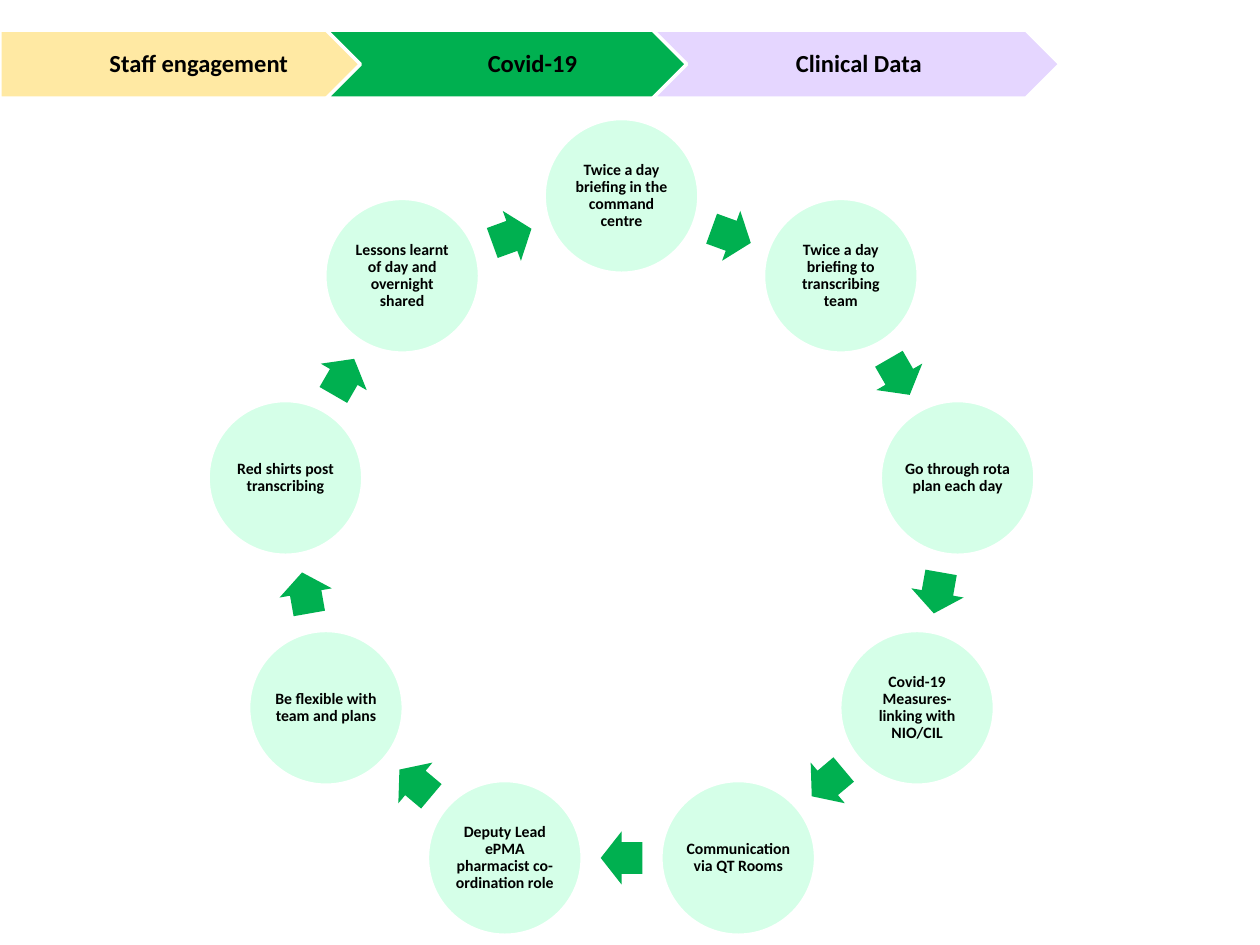
"""Builds a slide with a three-step banner above a nine-step briefing cycle."""
import math
from dataclasses import dataclass

import pptx
import pptx.dml.color
import pptx.enum.shapes
import pptx.enum.text
import pptx.util

Cm = pptx.util.Cm
Pt = pptx.util.Pt
SHAPES = pptx.enum.shapes.MSO_SHAPE

GREEN, MINT, WHITE, BLACK = "00B050", "D5FFE8", "FFFFFF", "000000"
CENTRE_X, CENTRE_Y, RADIUS = 12.53, 10.83, 6.88
CIRCLE_SIZE = 3.12
ARROW_WIDTH, ARROW_HEIGHT = 0.84, 1.07
BANNER_TOP, BANNER_WIDTH, BANNER_HEIGHT, BANNER_STEP = 0.61, 8.21, 1.37, 6.58


@dataclass
class Step:
    text: str
    fill: str
    preset: int
    left_margin: float


BANNER = [
    Step("Staff engagement", "FFE9A3", SHAPES.PENTAGON, 0.2),
    Step("Covid-19", GREEN, SHAPES.CHEVRON, 0.15),
    Step("Clinical Data", "E5D6FF", SHAPES.CHEVRON, 0.15),
]
CYCLE = [
    "Twice a day briefing in the command centre",
    "Twice a day briefing to transcribing team",
    "Go through rota plan each day",
    "Covid-19 Measures- linking with NIO/CIL",
    "Communication via QT Rooms",
    "Deputy Lead ePMA pharmacist co-ordination role",
    "Be flexible with team and plans",
    "Red shirts post transcribing",
    "Lessons learnt of day and overnight shared",
]


def set_colour(colour_format, value: str) -> None:
    colour_format.rgb = pptx.dml.color.RGBColor.from_string(value)


def set_attributes(target, values: dict) -> None:
    for name, value in values.items():
        setattr(target, name, value)


def add_filled(slide, preset, left: float, top: float, width: float, height: float,
               fill: str, outlined: bool = True):
    shape = slide.shapes.add_shape(preset, Cm(left), Cm(top), Cm(width), Cm(height))
    shape.shadow.inherit = False
    shape.fill.solid()
    set_colour(shape.fill.fore_color, fill)
    if outlined:
        set_colour(shape.line.color, WHITE)
        shape.line.width = Pt(2)
    else:
        shape.line.fill.background()
    return shape


def write_text(shape, text: str, size: float, margins: tuple) -> None:
    frame = shape.text_frame
    left, top, right, bottom = (Cm(margin) for margin in margins)
    set_attributes(frame, {
        "word_wrap": True,
        "vertical_anchor": pptx.enum.text.MSO_ANCHOR.MIDDLE,
        "margin_left": left,
        "margin_top": top,
        "margin_right": right,
        "margin_bottom": bottom,
    })
    paragraph = frame.paragraphs[0]
    set_attributes(paragraph, {"alignment": pptx.enum.text.PP_ALIGN.CENTER, "line_spacing": 0.9})
    run = paragraph.add_run()
    run.text = text
    set_attributes(run.font, {"name": "Calibri", "size": Pt(size), "bold": True})
    set_colour(run.font.color, BLACK)


def add_on_ring(slide, preset, angle: float, radius: float, width: float, height: float,
                fill: str, outlined: bool):
    left = CENTRE_X + radius * math.sin(math.radians(angle)) - width / 2
    top = CENTRE_Y - radius * math.cos(math.radians(angle)) - height / 2
    return add_filled(slide, preset, left, top, width, height, fill, outlined)


def draw_cycle(slide, labels: list) -> None:
    turn = 360 / len(labels)
    arrow_radius = RADIUS * math.cos(math.radians(turn / 2))
    for index, label in enumerate(labels):
        angle = index * turn
        circle = add_on_ring(slide, SHAPES.OVAL, angle, RADIUS,
                             CIRCLE_SIZE, CIRCLE_SIZE, MINT, True)
        write_text(circle, label, 9, (0.03,) * 4)
        arrow_angle = angle + turn / 2
        arrow = add_on_ring(slide, SHAPES.RIGHT_ARROW, arrow_angle, arrow_radius,
                            ARROW_WIDTH, ARROW_HEIGHT, GREEN, False)
        arrow.adjustments[0] = 0.6
        arrow.adjustments[1] = 0.5
        arrow.rotation = arrow_angle


def draw_banner(slide, steps: list) -> None:
    for index, step in enumerate(steps):
        shape = add_filled(slide, step.preset, index * BANNER_STEP, BANNER_TOP,
                           BANNER_WIDTH, BANNER_HEIGHT, step.fill)
        write_text(shape, step.text, 14, (step.left_margin, 0.1, 0.05, 0.1))


def main() -> None:
    presentation = pptx.Presentation()
    set_attributes(presentation, {"slide_width": Cm(25.4), "slide_height": Cm(19.05)})
    slide = presentation.slides.add_slide(presentation.slide_layouts[6])
    draw_cycle(slide, CYCLE)
    draw_banner(slide, BANNER)
    presentation.save("out.pptx")


if __name__ == "__main__":
    main()
